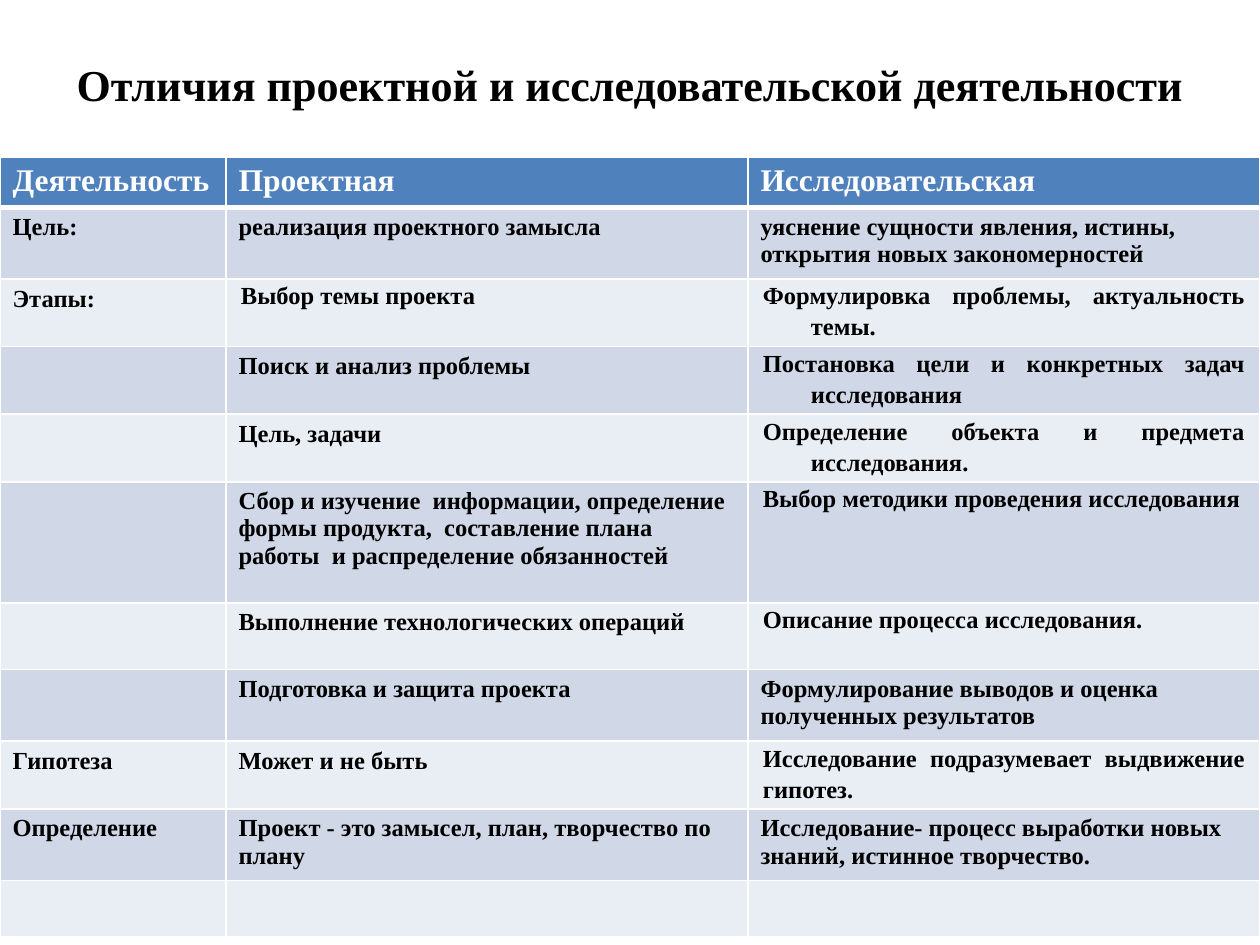
from lxml.etree import SubElement
from pptx import Presentation
from pptx.dml.color import RGBColor
from pptx.enum.text import MSO_ANCHOR as Anchor, PP_ALIGN as Align
from pptx.oxml.ns import qn
from pptx.util import Emu, Pt

PX = 914400 / 126
FONT = "Times New Roman"
BLACK = RGBColor(0x00, 0x00, 0x00)
WHITE = RGBColor(0xFF, 0xFF, 0xFF)
HEADER_BLUE = RGBColor(0x4F, 0x81, 0xBD)
BANDS = (RGBColor(0xD0, 0xD8, 0xE8), RGBColor(0xE9, 0xED, 0xF4))

TITLE = "Отличия проектной и исследовательской деятельности"
COLUMN_WIDTHS = (226, 522, 512)
ROW_HEIGHTS = (48, 67, 62, 67, 67, 121, 67, 67, 62, 67, 56)
ROWS = (
    ("Деятельность", "Проектная", "Исследовательская"),
    ("Цель:", "реализация проектного замысла",
     "уяснение сущности явления, истины, открытия новых закономерностей"),
    ("Этапы:", "Выбор темы проекта", "Формулировка проблемы, актуальность темы."),
    ("", "Поиск и анализ проблемы", "Постановка цели и конкретных задач исследования"),
    ("", "Цель, задачи", "Определение объекта и предмета исследования."),
    ("", "Сбор и изучение  информации, определение формы продукта,  составление плана "
     "работы  и распределение обязанностей", "Выбор методики проведения исследования"),
    ("", "Выполнение технологических операций", "Описание процесса исследования."),
    ("", "Подготовка и защита проекта",
     "Формулирование выводов и оценка полученных результатов"),
    ("Гипотеза", "Может и не быть", "Исследование подразумевает выдвижение гипотез."),
    ("Определение", "Проект - это замысел, план, творчество по плану",
     "Исследование- процесс выработки новых знаний, истинное творчество."),
    ("", "", ""),
)
HANGING_CELLS = {(2, 1), (2, 2), (3, 2), (4, 2), (5, 2), (6, 2)}
JUSTIFIED_CELLS = HANGING_CELLS | {(8, 2)}


def px(length):
    return Emu(round(length * PX))


def write(frame, text, size=14, color=BLACK, align=Align.LEFT,
          line_spacing=None, space_before=None, hanging=0):
    para = frame.paragraphs[0]
    para.alignment = align
    para.line_spacing = line_spacing
    para.space_before = space_before
    if hanging:
        properties = para._p.get_or_add_pPr()
        properties.set("marL", str(px(hanging)))
        properties.set("indent", str(-px(hanging)))
    span = para.add_run()
    span.text = text
    span.font.name = FONT
    span.font.size = Pt(size)
    span.font.bold = True
    span.font.color.rgb = color


def add_borders(cell, bottom):
    """Draw white cell edges, 1 pt wide except for the given bottom width."""
    properties = cell._tc.get_or_add_tcPr()
    for edge, width in (("L", 1), ("R", 1), ("T", 1), ("B", bottom)):
        line = SubElement(properties, qn(f"a:ln{edge}"), w=str(Pt(width)))
        fill = SubElement(line, qn("a:solidFill"))
        SubElement(fill, qn("a:srgbClr"), val=str(WHITE))


def add_title(page, left, top, width, height):
    box = page.shapes.add_textbox(px(left), px(top), px(width), px(height))
    frame = box.text_frame
    frame.word_wrap = True
    frame.vertical_anchor = Anchor.MIDDLE
    write(frame, TITLE, size=25.2, align=Align.CENTER)


def fill_cell(cell, row, column, text):
    header = row == 0
    add_borders(cell, bottom=3 if header else 1)
    cell.fill.solid()
    cell.fill.fore_color.rgb = HEADER_BLUE if header else BANDS[(row - 1) % 2]
    if not text:
        return
    if header:
        write(cell.text_frame, text, size=18, color=WHITE)
    elif (row, column) in JUSTIFIED_CELLS:
        cell.margin_left = cell.margin_right = px(15)
        cell.margin_top = cell.margin_bottom = 0
        hanging = (row, column) in HANGING_CELLS
        write(cell.text_frame, text, align=Align.JUSTIFY, line_spacing=1.15,
              space_before=Pt(1.5) if hanging else None, hanging=48 if hanging else 0)
    else:
        write(cell.text_frame, text)


def add_comparison(page, left, top):
    table = page.shapes.add_table(
        len(ROWS), len(COLUMN_WIDTHS), px(left), px(top),
        px(sum(COLUMN_WIDTHS)), px(sum(ROW_HEIGHTS))).table
    for column, width in zip(table.columns, COLUMN_WIDTHS):
        column.width = px(width)
    for row, height in zip(table.rows, ROW_HEIGHTS):
        row.height = px(height)
    for row, texts in enumerate(ROWS):
        for column, text in enumerate(texts):
            fill_cell(table.cell(row, column), row, column, text)


def main():
    deck = Presentation()
    deck.slide_width, deck.slide_height = px(1260), px(945)
    page = deck.slides.add_slide(deck.slide_layouts[6])
    add_title(page, 63, 38, 1134, 91)
    add_comparison(page, 0, 157)
    deck.save("out.pptx")


if __name__ == "__main__":
    main()
